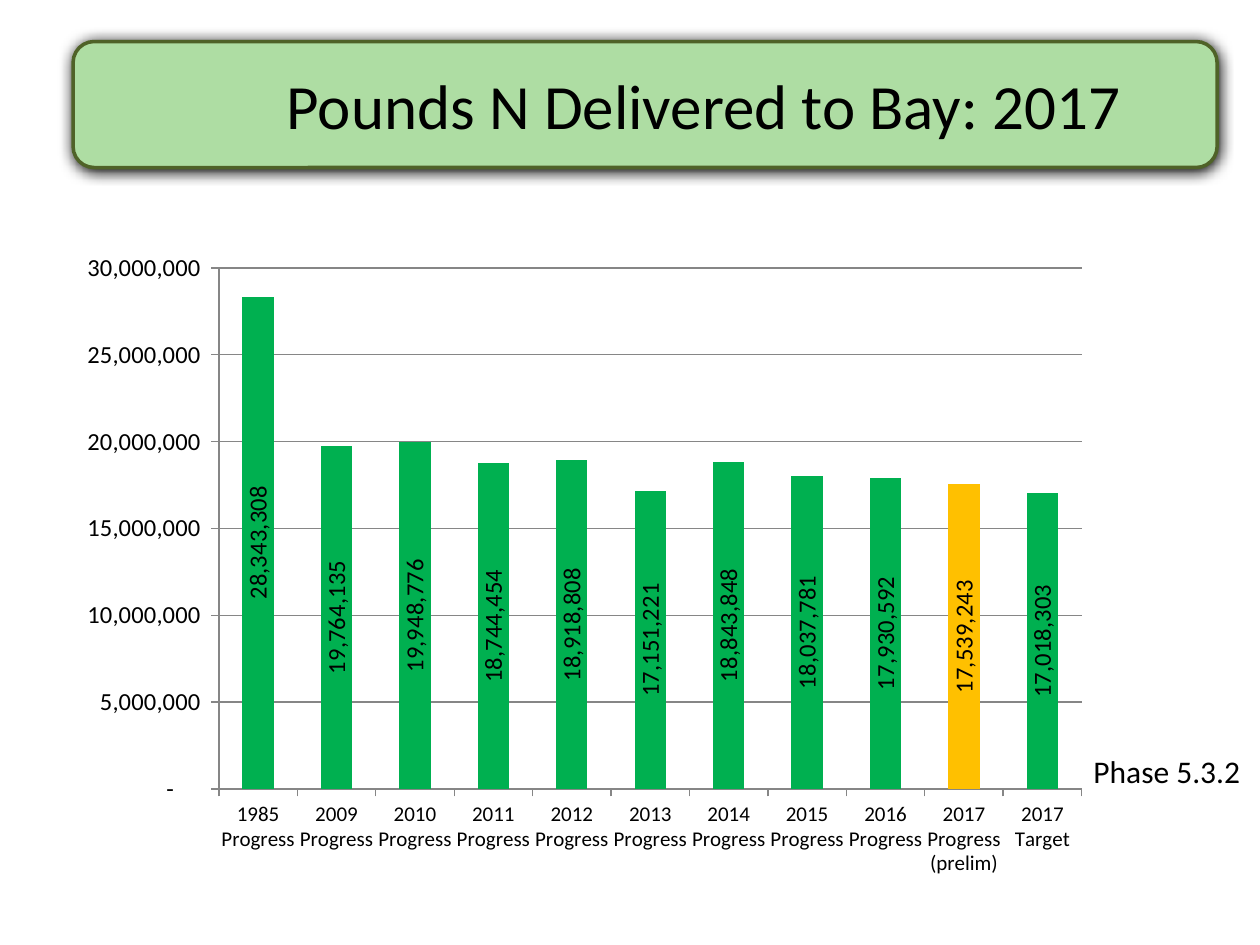
from dataclasses import dataclass

from pptx import Presentation
from pptx.chart.data import CategoryChartData
from pptx.dml.color import RGBColor
from pptx.enum.chart import XL_CHART_TYPE, XL_LABEL_POSITION, XL_TICK_MARK
from pptx.enum.shapes import MSO_SHAPE
from pptx.enum.text import MSO_ANCHOR, PP_ALIGN
from pptx.oxml import parse_xml
from pptx.oxml.ns import nsdecls
from pptx.util import Inches, Pt

COLUMNS = XL_CHART_TYPE.COLUMN_CLUSTERED
LABEL_CENTER = XL_LABEL_POSITION.CENTER
TICK_OUT = XL_TICK_MARK.OUTSIDE
ROUNDED = MSO_SHAPE.ROUNDED_RECTANGLE
MIDDLE = MSO_ANCHOR.MIDDLE
CENTER = PP_ALIGN.CENTER

TITLE_ONLY = 5
AXIS_FORMAT = '_(* #,##0_);_(* \\(#,##0\\);_(* "-"??_);_(@_)'
PLOT_AREA = {"x": 0.15, "y": 0.04, "w": 0.83, "h": 0.8}
POUNDS = {
    "1985 Progress": 28343308,
    "2009 Progress": 19764135,
    "2010 Progress": 19948776,
    "2011 Progress": 18744454,
    "2012 Progress": 18918808,
    "2013 Progress": 17151221,
    "2014 Progress": 18843848,
    "2015 Progress": 18037781,
    "2016 Progress": 17930592,
    "2017 Progress (prelim)": 17539243,
    "2017 Target": 17018303,
}


@dataclass(frozen=True)
class Theme:
    """Colours, font and type sizes of the slide."""

    font: str = "Calibri"
    text: str = "000000"
    banner: str = "AEDDA3"
    banner_line: str = "4F6228"
    bar: str = "00B050"
    highlight: str = "FFC000"
    grid: str = "868686"
    title_size: int = 36
    note_size: int = 18
    value_size: int = 14
    category_size: int = 12


class SlideBuilder:
    """Places styled elements on one slide, in inches of a 10 by 7.5 grid."""

    def __init__(self, page, theme):
        """Keep the slide and its theme."""
        self.page = page
        self.theme = theme

    def style_font(self, font, size):
        """Apply the theme's font at a given size."""
        font.name = self.theme.font
        font.size = Pt(size)
        font.bold = False
        font.color.rgb = RGBColor.from_string(self.theme.text)

    def paint(self, fill, color):
        """Fill with one solid colour."""
        fill.solid()
        fill.fore_color.rgb = RGBColor.from_string(color)

    def draw_line(self, line, color, width):
        """Set the colour and width of a line."""
        line.color.rgb = RGBColor.from_string(color)
        line.width = Pt(width)

    def banner(self, area):
        """Draw the rounded, shadowed panel behind the title."""
        panel = self.page.shapes.add_shape(ROUNDED, *map(Inches, area))
        self.paint(panel.fill, self.theme.banner)
        self.draw_line(panel.line, self.theme.banner_line, 2)
        panel.element.spPr.append(parse_xml(
            f'<a:effectLst {nsdecls("a")}><a:outerShdw blurRad="{Pt(8.5)}" '
            f'dist="{Pt(1)}" dir="5400000" algn="ctr" rotWithShape="0">'
            f'<a:srgbClr val="{self.theme.text}"/></a:outerShdw></a:effectLst>'
        ))

    def title(self, text, area):
        """Fill the title placeholder and bring it to the front."""
        box = self.page.shapes.title
        box.left, box.top, box.width, box.height = map(Inches, area)
        frame = box.text_frame
        frame.text = text
        frame.vertical_anchor = MIDDLE
        frame.paragraphs[0].alignment = CENTER
        self.style_font(frame.paragraphs[0].runs[0].font, self.theme.title_size)
        box.element.getparent().append(box.element)

    def note(self, text, area):
        """Add a wrapped line of text."""
        frame = self.page.shapes.add_textbox(*map(Inches, area)).text_frame
        frame.word_wrap = True
        frame.text = text
        self.style_font(frame.paragraphs[0].runs[0].font, self.theme.note_size)

    def column_chart(self, values, highlighted, area):
        """Add a column chart with upright value labels and one highlighted bar."""
        data = CategoryChartData(number_format="#,##0")
        data.categories = list(values)
        data.add_series("Series 1", list(values.values()))
        frame = self.page.shapes.add_chart(COLUMNS, *map(Inches, area), data)
        chart = frame.chart
        chart.has_title = False
        chart.has_legend = False
        self.style_font(chart.font, 10)
        self.style_axis(chart.category_axis, self.theme.category_size)
        self.style_axis(chart.value_axis, self.theme.value_size)
        chart.value_axis.minimum_scale = 0
        chart.value_axis.maximum_scale = 30_000_000
        chart.value_axis.major_unit = 5_000_000
        chart.value_axis.tick_labels.number_format = AXIS_FORMAT
        chart.value_axis.tick_labels.number_format_is_linked = False
        chart.value_axis.has_major_gridlines = True
        self.draw_line(chart.value_axis.major_gridlines.format.line, self.theme.grid, 0.75)

        plot = chart.plots[0]
        plot.vary_by_categories = False
        plot.gap_width = 150
        series = plot.series[0]
        self.paint(series.format.fill, self.theme.bar)
        point = series.points[list(values).index(highlighted)]
        self.paint(point.format.fill, self.theme.highlight)
        labels = series.data_labels
        labels.show_value = True
        labels.position = LABEL_CENTER
        labels.number_format = "#,##0"
        labels.number_format_is_linked = False
        self.style_font(labels.font, self.theme.value_size)
        for body in chart.element.xpath(".//c:dLbls/c:txPr/a:bodyPr"):
            body.set("rot", "-5400000")
            body.set("vert", "horz")
        self.fix_plot_area(chart)

    def style_axis(self, axis, size):
        """Set the line, ticks and label font of an axis."""
        axis.major_tick_mark = TICK_OUT
        self.draw_line(axis.format.line, self.theme.grid, 0.75)
        self.style_font(axis.tick_labels.font, size)

    def fix_plot_area(self, chart):
        """Pin the inner plot area to shares of the chart."""
        plot_area = chart.element.xpath(".//c:plotArea")[0]
        for layout in plot_area.xpath("./c:layout"):
            plot_area.remove(layout)
        modes = '<c:xMode val="edge"/><c:yMode val="edge"/>'
        shares = "".join(f'<c:{key} val="{share}"/>' for key, share in PLOT_AREA.items())
        plot_area.insert(0, parse_xml(
            f'<c:layout {nsdecls("c")}><c:manualLayout><c:layoutTarget val="inner"/>'
            f'{modes}{shares}</c:manualLayout></c:layout>'
        ))


def main():
    """Build and save the slide."""
    deck = Presentation()
    deck.slide_width, deck.slide_height = Inches(10), Inches(7.5)
    page = deck.slides.add_slide(deck.slide_layouts[TITLE_ONLY])
    builder = SlideBuilder(page, Theme())
    builder.banner((0.58, 0.33, 9.08, 1))
    builder.title("Pounds N Delivered to Bay: 2017", (1.5, 0.33, 8.17, 1))
    builder.column_chart(POUNDS, "2017 Progress (prelim)", (0.5, 1.92, 8.25, 5.17))
    builder.note("Phase 5.3.2", (8.58, 5.92, 1.5, 0.4))
    deck.save("out.pptx")


if __name__ == "__main__":
    main()
